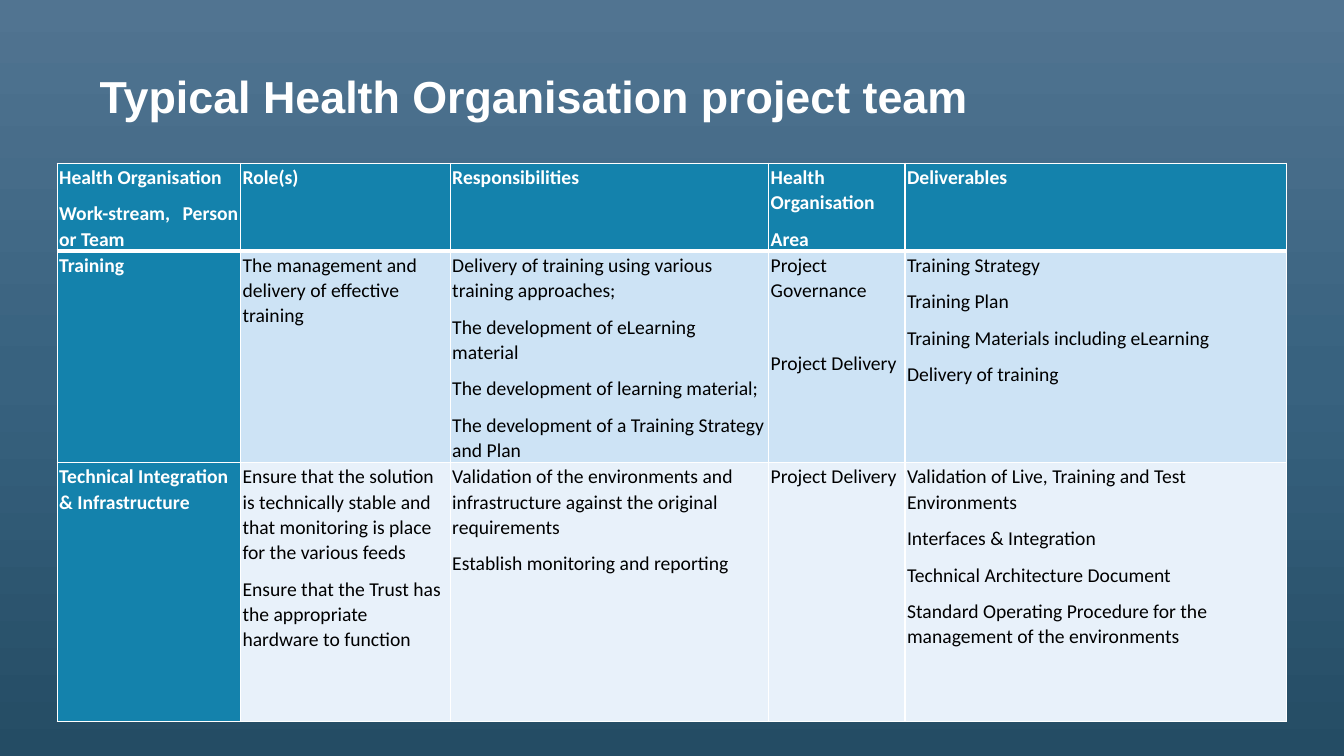
from copy import deepcopy

from lxml.etree import SubElement
from pptx import Presentation
from pptx.dml.color import RGBColor as Color
from pptx.enum.text import MSO_ANCHOR as Anchor, MSO_AUTO_SIZE as AutoSize, PP_ALIGN as Align
from pptx.oxml.ns import qn
from pptx.util import Pt

COLORS = {
    "white": "FFFFFF",
    "black": "000000",
    "header": "1482AC",
    "training": "CDE3F5",
    "technical": "E8F1FA",
    "sky": "517491",
    "mid": "38627F",
    "deep": "244C64",
}

COLUMN_WIDTHS = [131, 149.8, 227.5, 97.4, 272.5]
ROW_HEIGHTS = [62.5, 151, 185]
ROW_FILLS = ["header", "training", "technical"]
AREA_GAP = 26

ROWS = [
    [
        ["Health Organisation", "Work-stream, Person or Team"],
        ["Role(s)"],
        ["Responsibilities"],
        ["Health Organisation", "Area"],
        ["Deliverables"],
    ],
    [
        ["Training"],
        ["The management and delivery of effective training"],
        [
            "Delivery of training using various \vtraining approaches;",
            "The development of eLearning material",
            "The development of learning material;",
            "The development of a Training Strategy and Plan",
        ],
        ["Project Governance", "Project Delivery"],
        [
            "Training Strategy",
            "Training Plan",
            "Training Materials including eLearning",
            "Delivery of training",
        ],
    ],
    [
        ["Technical Integration & Infrastructure"],
        [
            "Ensure that the solution is technically stable and that monitoring is place "
            "for the various feeds",
            "Ensure that the Trust has the appropriate hardware to function",
        ],
        [
            "Validation of the environments and infrastructure against the original requirements",
            "Establish monitoring and reporting",
        ],
        ["Project Delivery"],
        [
            "Validation of Live, Training and Test Environments",
            "Interfaces & Integration",
            "Technical Architecture Document",
            "Standard Operating Procedure for the management of the environments",
        ],
    ],
]


class SlideBuilder:
    def __init__(self, deck):
        self.page = deck.slides.add_slide(deck.slide_layouts[5])

    def color(self, name):
        return Color.from_string(COLORS[name])

    def background(self, names):
        fill = self.page.background.fill
        fill.gradient()
        fill.gradient_angle = 270
        first = next(self.page.element.iter(qn("a:gs")))
        first.addnext(deepcopy(first))
        for index, (stop, name) in enumerate(zip(fill.gradient_stops, names)):
            stop.position = index / (len(names) - 1)
            stop.color.rgb = self.color(name)

    def style_font(self, para, face, size, color, bold):
        para.font.name = face
        para.font.size = Pt(size)
        para.font.bold = bold
        para.font.color.rgb = self.color(color)

    def title(self, text, left, top, width, height):
        box = self.page.shapes.title
        box.left, box.top, box.width, box.height = map(Pt, (left, top, width, height))
        frame = box.text_frame
        frame.text = text
        frame.word_wrap = True
        frame.auto_size = AutoSize.NONE
        frame.vertical_anchor = Anchor.MIDDLE
        para = frame.paragraphs[0]
        para.alignment = Align.LEFT
        para.line_spacing = 0.9
        self.style_font(para, "Arial", 32, "white", True)

    def borders(self, cell, widths):
        properties = cell._tc.get_or_add_tcPr()
        for side, width in widths.items():
            line = SubElement(properties, qn(f"a:ln{side}"), w=str(Pt(width)))
            fill = SubElement(line, qn("a:solidFill"))
            SubElement(fill, qn("a:srgbClr"), val=COLORS["white"])

    def cell(self, cell, lines, fill, heading, align):
        cell.margin_left = cell.margin_right = Pt(1.5)
        cell.margin_top, cell.margin_bottom = Pt(0.7), Pt(0)
        cell.vertical_anchor = Anchor.TOP
        cell.fill.solid()
        cell.fill.fore_color.rgb = self.color(fill)
        frame = cell.text_frame
        frame.text = "\n".join(lines)
        for para in frame.paragraphs:
            para.alignment = align
            para.line_spacing = 1.06
            para.space_after = Pt(8)
            self.style_font(para, "Calibri", 14, "white" if heading else "black", heading)

    def table(self, rows, left, top):
        frame = self.page.shapes.add_table(
            len(rows), len(COLUMN_WIDTHS), Pt(left), Pt(top),
            Pt(sum(COLUMN_WIDTHS)), Pt(sum(ROW_HEIGHTS)))
        table = frame.table
        for column, width in zip(table.columns, COLUMN_WIDTHS):
            column.width = Pt(width)
        for r, (row, height) in enumerate(zip(rows, ROW_HEIGHTS)):
            table.rows[r].height = Pt(height)
            for c, lines in enumerate(row):
                cell = table.cell(r, c)
                heading = r == 0 or c == 0
                self.borders(cell, {"L": 1, "R": 1, "T": 3 if r == 1 else 1, "B": 3 if r == 0 else 1})
                self.cell(cell, lines, "header" if heading else ROW_FILLS[r], heading,
                          Align.JUSTIFY if r == 0 else Align.LEFT)
        return table


def main():
    deck = Presentation()
    deck.slide_width, deck.slide_height = Pt(960), Pt(540)
    slide = SlideBuilder(deck)
    slide.background(["sky", "mid", "deep"])
    slide.title("Typical Health Organisation project team", 64, 48, 845, 46)
    table = slide.table(ROWS, 40.8, 116.6)
    table.cell(1, 3).text_frame.paragraphs[1].space_before = Pt(AREA_GAP)
    deck.save("out.pptx")


if __name__ == "__main__":
    main()
